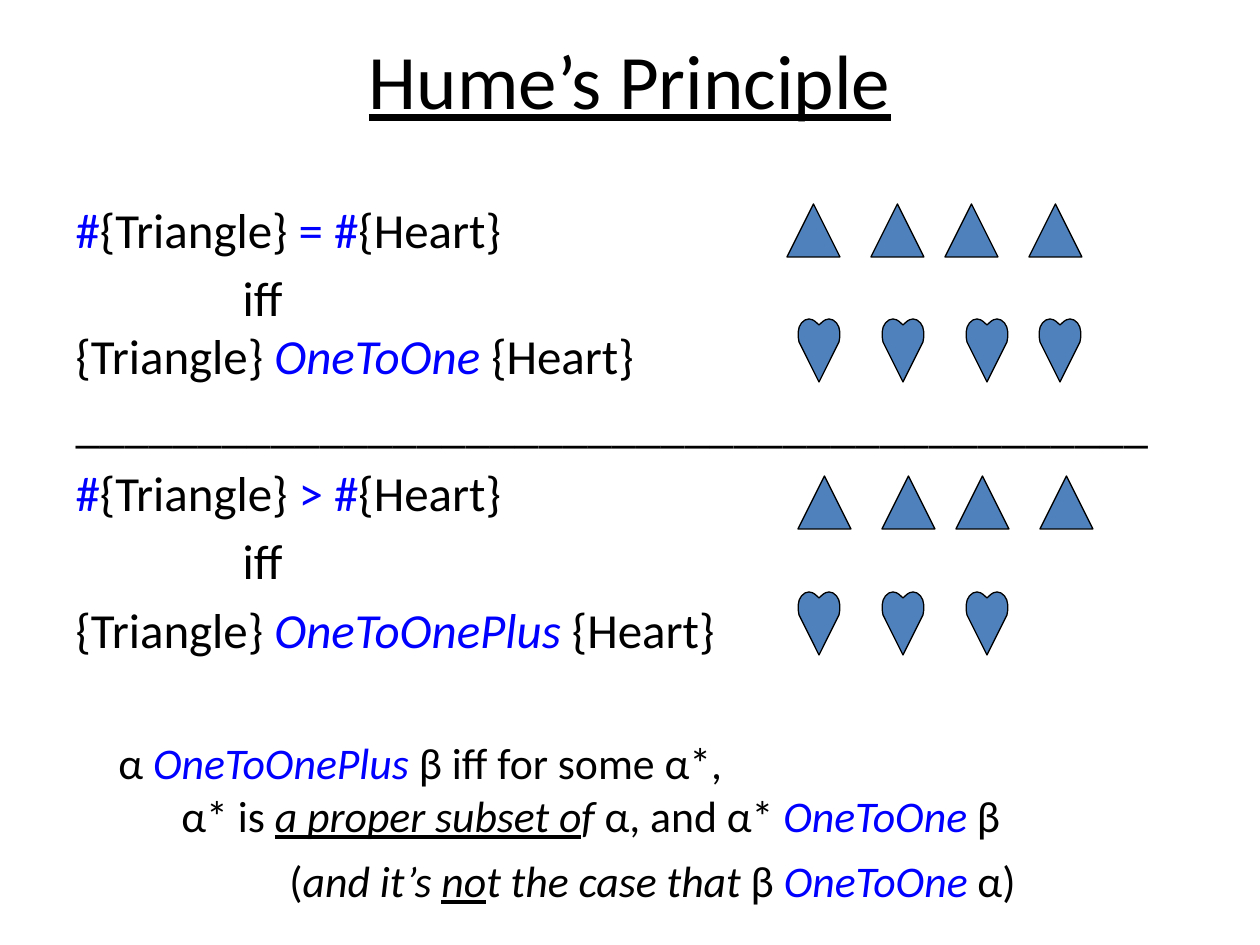
from lxml import etree
from pptx import Presentation
from pptx.dml.color import RGBColor
from pptx.enum.shapes import MSO_SHAPE
from pptx.enum.text import MSO_ANCHOR, PP_ALIGN
from pptx.oxml.ns import qn
from pptx.util import Pt

PX = 914400 / 126
BLACK = RGBColor(0x00, 0x00, 0x00)
BLUE = RGBColor(0x00, 0x00, 0xFF)
STEEL = RGBColor(0x4F, 0x81, 0xBD)


def px(n):
    return round(n * PX)


def write_paragraphs(tf, lines, size):
    """Each line is (indent in px, runs); a run is (text, style letters b = blue, i, u)."""
    tf.word_wrap = True
    for n, (indent, runs) in enumerate(lines):
        p = tf.paragraphs[0] if n == 0 else tf.add_paragraph()
        p.font.size, p.font.name = Pt(size), "Calibri"
        pPr = p._p.get_or_add_pPr()
        pPr.set("marL", str(px(indent)))
        pPr.set("indent", "0")
        pPr.insert(0, etree.Element(qn("a:buNone")))
        for text, style in runs:
            r = p.add_run()
            r.text = text
            r.font.size, r.font.name = Pt(size), "Calibri"
            r.font.color.rgb = BLUE if "b" in style else BLACK
            if "i" in style:
                r.font.italic = True
            if "u" in style:
                r.font.underline = True


prs = Presentation()
prs.slide_width, prs.slide_height = px(1260), px(945)
s = prs.slides.add_slide(prs.slide_layouts[1])

# Title
title = s.shapes.title
title.left, title.top, title.width, title.height = px(63), 0, px(1134), px(158)
title.text_frame.vertical_anchor = MSO_ANCHOR.MIDDLE
p = title.text_frame.paragraphs[0]
p.text = "Hume’s Principle"
p.alignment = PP_ALIGN.CENTER
font = p.runs[0].font
font.size, font.name, font.underline = Pt(44), "Calibri", True
font.color.rgb = BLACK

# The two principles, separated by a rule
principles = []
for sign, relation in (("=", "OneToOne"), (">", "OneToOnePlus")):
    if principles:
        principles.append((0, [("_" * 44, "")]))
    principles += [
        (0, [("#", "b"), ("{Triangle} ", ""), (f"{sign} #", "b"), ("{Heart}", "")]),
        (167, [("iff", "")]),
        (0, [("{Triangle} ", ""), (f"{relation} ", "bi"), ("{Heart}", "")]),
    ]
body = s.placeholders[1]
body.left, body.top, body.width, body.height = px(63), px(193), px(1124), px(752)
write_paragraphs(body.text_frame, principles, 28)
for p in body.text_frame.paragraphs:
    p.space_before = Pt(5.6)
body.text_frame.paragraphs[2].line_spacing = 0.8

# Triangles and hearts
HALF_HEART = [(0, 60), (20, 42), (38, 25), (65, 8), (100, 0), (140, 10), (175, 40),
              (198, 80), (208, 130), (208, 180), (200, 230), (0, 630)]  # tenths of a px
outline = HALF_HEART + [(-x, y) for x, y in HALF_HEART[-2:0:-1]]
figures = []
for triangle_x, triangle_y, heart_y, heart_xs in (
    (787, 204, 319, (798, 882, 966, 1039)),
    (798, 476, 592, (798, 882, 966)),
):
    for dx in (0, 84, 158, 242):
        figures.append(s.shapes.add_shape(MSO_SHAPE.ISOSCELES_TRIANGLE, px(triangle_x + dx),
                                          px(triangle_y), px(53), px(53)))
    for x in heart_xs:
        builder = s.shapes.build_freeform(*outline[0], scale=PX / 10)
        builder.add_line_segments(outline[1:], close=True)
        figures.append(builder.convert_to_shape(px(x + 21), px(heart_y)))
for sp in figures:
    sp.shadow.inherit = False
    sp.fill.solid()
    sp.fill.fore_color.rgb = STEEL
    sp.line.color.rgb = BLACK
    sp.line.width = Pt(0.75)

# Definition of OneToOnePlus
definition = [
    (0, [("α ", ""), ("OneToOnePlus ", "bi"), ("β iff for some α*,", "")]),
    (63, [("α* is ", ""), ("a proper subset o", "iu"), ("f ", "i"), ("α, and α* ", ""),
          ("OneToOne ", "bi"), ("β", "")]),
]
remark = [(0, [("(", ""), ("and it’s ", "i"), ("no", "iu"), ("t the case that ", "i"),
               ("β ", ""), ("OneToOne ", "bi"), ("α)", "")])]
for x, y, w, h, lines in ((106, 730, 1091, 118, definition), (277, 848, 764, 66, remark)):
    box = s.shapes.add_textbox(px(x), px(y), px(w), px(h))
    write_paragraphs(box.text_frame, lines, 25)

prs.save("out.pptx")
